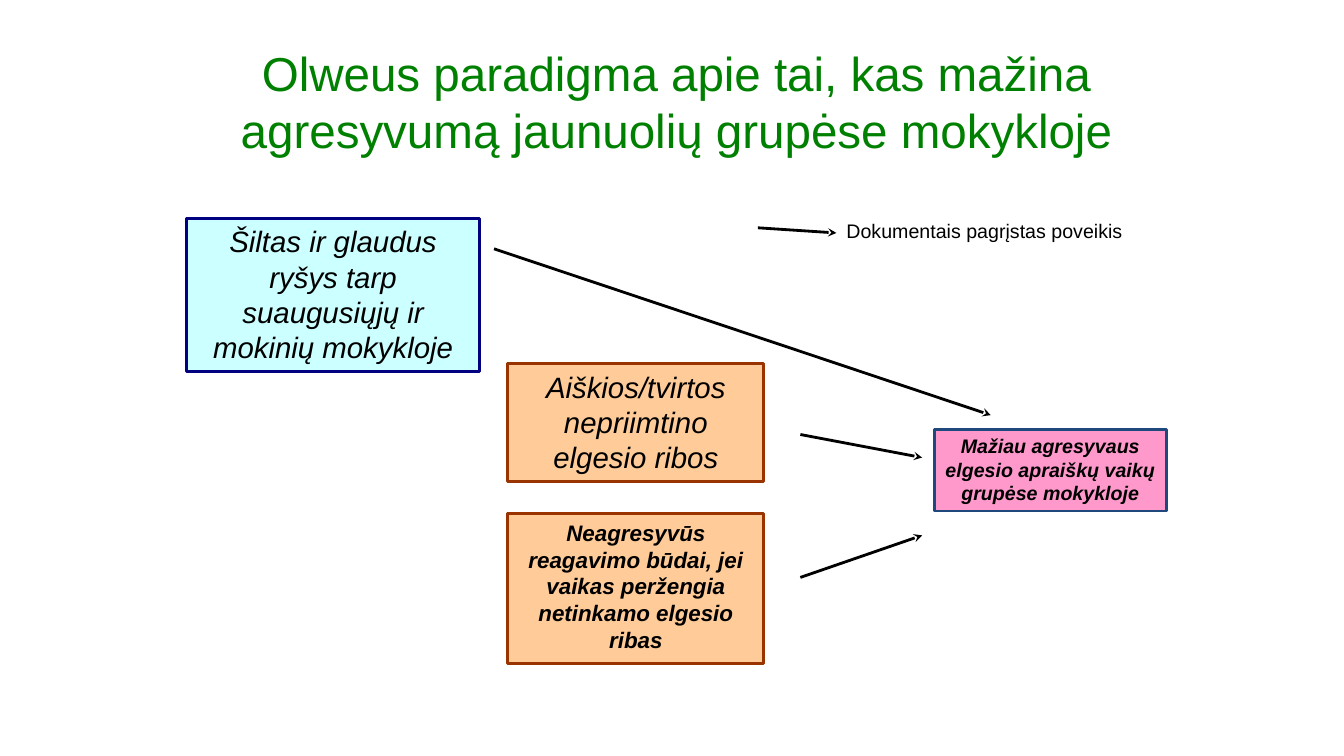
from dataclasses import dataclass

from lxml.etree import SubElement
from pptx import Presentation
from pptx.dml.color import RGBColor as RGB
from pptx.enum.shapes import MSO_CONNECTOR as CONN, MSO_SHAPE as SHAPE
from pptx.enum.text import MSO_ANCHOR as ANCHOR, MSO_AUTO_SIZE as AUTO, PP_ALIGN as ALIGN
from pptx.oxml.ns import qn
from pptx.util import Cm, Pt


@dataclass(frozen=True)
class Theme:
    font: str = "Arial"
    black: str = "000000"
    green: str = "008000"
    cyan: str = "CCFFFF"
    navy: str = "000080"
    peach: str = "FFCC99"
    rust: str = "993300"
    pink: str = "FF99CC"
    blue: str = "1F497D"
    title: int = 34
    large: int = 21
    medium: int = 16
    small: int = 14
    line: int = 2


THEME = Theme()


def write(sp, text, size, color=THEME.black, align=ALIGN.CENTER, **style):
    tf = sp.text_frame
    frame = {"word_wrap": True, "auto_size": AUTO.SHAPE_TO_FIT_TEXT,
             "vertical_anchor": ANCHOR.TOP}
    for name, value in frame.items():
        setattr(tf, name, value)
    p = tf.paragraphs[0]
    p.alignment = align
    r = p.add_run()
    r.text = text
    for name, value in {"name": THEME.font, "size": Pt(size), **style}.items():
        setattr(r.font, name, value)
    r.font.color.rgb = RGB.from_string(color)


def add_label(s, at, text, size, **style):
    write(s.shapes.add_textbox(*map(Cm, at)), text, size, **style)


def add_box(s, at, fill, border, text, size, bold=False):
    sp = s.shapes.add_shape(SHAPE.RECTANGLE, *map(Cm, at))
    sp.shadow.inherit = False
    sp.fill.solid()
    sp.fill.fore_color.rgb = RGB.from_string(fill)
    sp.line.color.rgb = RGB.from_string(border)
    sp.line.width = Pt(THEME.line)
    write(sp, text, size, bold=bold, italic=True)


def add_arrow(s, start, end):
    arrow = s.shapes.add_connector(CONN.STRAIGHT, *map(Cm, start + end))
    arrow.line.color.rgb = RGB.from_string(THEME.black)
    arrow.line.width = Pt(THEME.line)
    SubElement(arrow.line._get_or_add_ln(), qn("a:tailEnd"), type="stealth")
    SubElement(arrow._element.spPr, qn("a:effectLst"))


def main():
    prs = Presentation()
    prs.slide_width, prs.slide_height = Cm(33.87), Cm(19.05)
    s = prs.slides.add_slide(prs.slide_layouts[6])
    t = THEME

    add_label(s, (4.47, 0.99, 25.17, 3.18),
              "Olweus paradigma apie tai, kas mažina agresyvumą jaunuolių grupėse mokykloje",
              t.title, color=t.green)
    add_label(s, (21.08, 5.38, 7.8, 0.86), "Dokumentais pagrįstas poveikis",
              t.small, align=ALIGN.LEFT)

    add_box(s, (4.7, 5.51, 7.39, 3.86), t.cyan, t.navy,
            "Šiltas ir glaudus ryšys tarp suaugusiųjų ir mokinių mokykloje", t.large)
    add_box(s, (12.8, 9.17, 6.45, 2.97), t.peach, t.rust,
            "Aiškios/tvirtos nepriimtino elgesio ribos", t.large)
    add_box(s, (12.8, 12.95, 6.45, 3.78), t.peach, t.rust,
            "Neagresyvūs reagavimo būdai, jei vaikas peržengia netinkamo elgesio ribas",
            t.medium, bold=True)
    add_box(s, (23.55, 10.82, 5.84, 2.06), t.pink, t.blue,
            "Mažiau agresyvaus elgesio apraiškų vaikų grupėse mokykloje",
            t.small, bold=True)

    for start, end in (
        ((19.1, 5.74), (21.08, 5.87)),
        ((12.45, 6.27), (24.97, 10.46)),
        ((20.17, 10.95), (23.24, 11.53)),
        ((20.17, 14.55), (23.24, 13.49)),
    ):
        add_arrow(s, start, end)

    prs.save("out.pptx")


if __name__ == "__main__":
    main()
